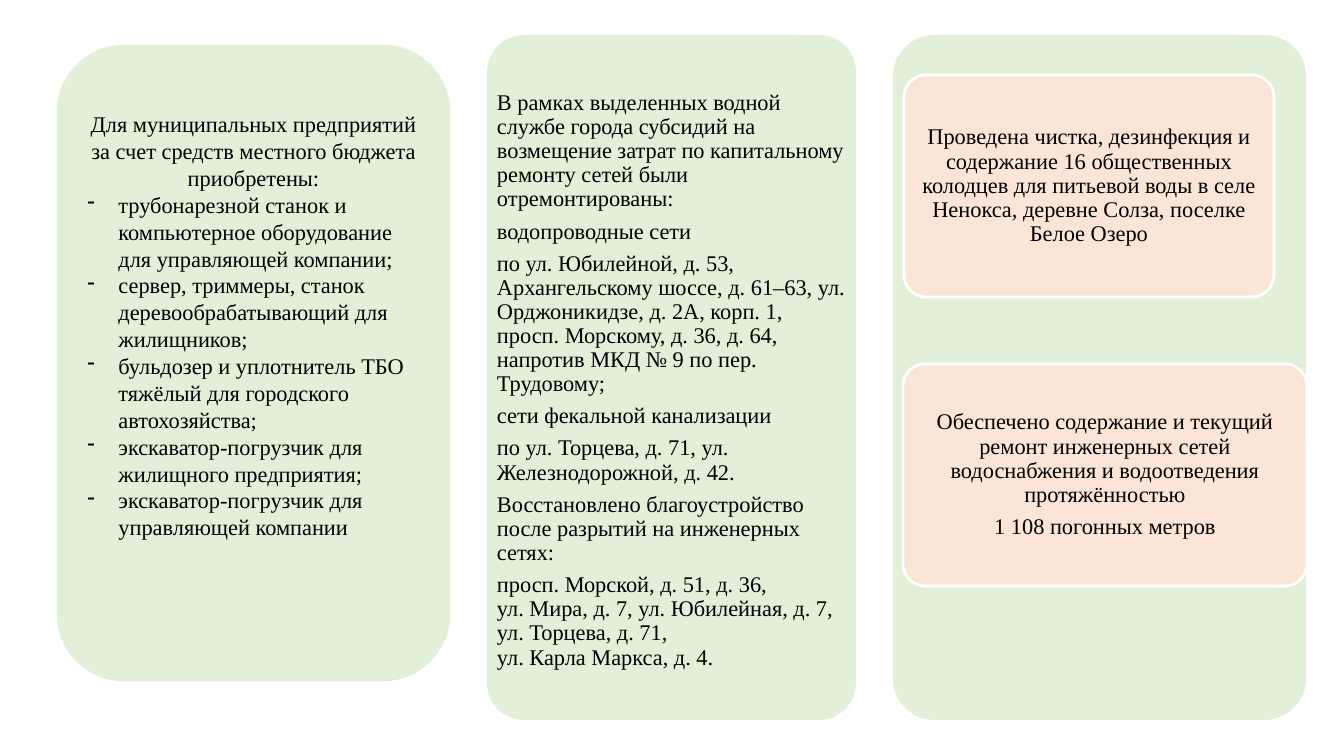
"""Builds a slide with three panels on municipal utilities work."""
from lxml.etree import SubElement
from pptx import Presentation
from pptx.dml.color import RGBColor
from pptx.enum.shapes import MSO_SHAPE
from pptx.enum.text import MSO_ANCHOR, PP_ALIGN
from pptx.oxml.ns import qn
from pptx.util import Emu, Pt

PURCHASES_TITLE = "Для муниципальных предприятий за счет средств местного бюджета приобретены:"
PURCHASES = [
    "трубонарезной станок и компьютерное оборудование для управляющей компании;",
    "сервер, триммеры, станок деревообрабатывающий для жилищников;",
    "бульдозер и уплотнитель ТБО тяжёлый для городского автохозяйства;",
    "экскаватор-погрузчик для жилищного предприятия;",
    "экскаватор-погрузчик для управляющей компании",
]
REPAIRS = [
    "В рамках выделенных водной службе города субсидий на возмещение затрат по "
    "капитальному ремонту сетей были отремонтированы:",
    "водопроводные сети",
    "по ул. Юбилейной, д. 53, Архангельскому шоссе, д. 61–63, ул. Орджоникидзе, д. 2А, "
    "корп. 1, просп. Морскому, д. 36, д. 64, напротив МКД № 9 по пер. Трудовому;",
    "сети фекальной канализации",
    "по ул. Торцева, д. 71, ул. Железнодорожной, д. 42.",
    "Восстановлено благоустройство после разрытий на инженерных сетях:",
    "просп. Морской, д. 51, д. 36,\nул. Мира, д. 7, ул. Юбилейная, д. 7, "
    "ул. Торцева, д. 71,\nул. Карла Маркса, д. 4.",
]
WELLS = [
    "Проведена чистка, дезинфекция и содержание 16 общественных колодцев для питьевой "
    "воды в селе Ненокса, деревне Солза, поселке Белое Озеро",
]
NETWORKS = [
    "Обеспечено содержание и текущий ремонт инженерных сетей водоснабжения и "
    "водоотведения протяжённостью",
    "1 108 погонных метров",
]
PURCHASES_BOX = (58, 46, 391, 634)
REPAIRS_BOX = (487, 35, 369, 685)
REPAIRS_TEXT_BOX = (487, 81, 369, 600)
SERVICES_BOX = (893, 35, 413, 685)
CARDS = [((904, 75, 370, 222), WELLS), ((903, 364, 404, 222), NETWORKS)]

GREEN = RGBColor(0xE2, 0xF0, 0xD9)
PEACH = RGBColor(0xFB, 0xE5, 0xD6)
WHITE = RGBColor(0xFF, 0xFF, 0xFF)
BLACK = RGBColor(0, 0, 0)
FONT = "Times New Roman"
PX = 914400 / 100.8
INDENT = 31


def px(length):
    return Emu(round(length * PX))


def add_panel(slide, box, fill, line=None, corner=0.1):
    panel = slide.shapes.add_shape(MSO_SHAPE.ROUNDED_RECTANGLE, *map(px, box))
    panel.adjustments[0] = corner
    panel.shadow.inherit = False
    panel.fill.solid()
    panel.fill.fore_color.rgb = fill
    if line is None:
        panel.line.fill.background()
    else:
        panel.line.color.rgb = line
        panel.line.width = Pt(2)
    return panel


def set_frame(frame, anchor, side, top):
    frame.word_wrap = True
    frame.vertical_anchor = anchor
    frame.margin_left = frame.margin_right = px(side)
    frame.margin_top = px(top)
    frame.margin_bottom = px(min(side, top))


def write(frame, texts, align, spacing=None, after=0, bullet=None):
    for text in texts:
        paragraph = frame.paragraphs[0]
        if paragraph.runs:
            paragraph = frame.add_paragraph()
        paragraph.alignment = align
        paragraph.line_spacing = spacing
        paragraph.space_after = Pt(after)
        if bullet:
            properties = paragraph._p.get_or_add_pPr()
            properties.set("marL", str(px(INDENT)))
            properties.set("indent", str(-px(INDENT)))
            SubElement(properties, qn("a:buFontTx"))
            SubElement(properties, qn("a:buChar")).set("char", bullet)
        for number, part in enumerate(text.split("\n")):
            if number:
                paragraph.add_line_break()
            run = paragraph.add_run()
            run.text = part
            run.font.name = FONT
            run.font.size = Pt(16)
            run.font.color.rgb = BLACK


def main():
    deck = Presentation()
    deck.slide_width, deck.slide_height = px(1344), px(756)
    slide = deck.slides.add_slide(deck.slide_layouts[6])

    add_panel(slide, REPAIRS_BOX, GREEN)
    repairs = slide.shapes.add_textbox(*map(px, REPAIRS_TEXT_BOX)).text_frame
    set_frame(repairs, MSO_ANCHOR.TOP, side=10, top=10)
    write(repairs, REPAIRS, PP_ALIGN.LEFT, spacing=0.9, after=5.6)

    add_panel(slide, SERVICES_BOX, GREEN)
    for box, texts in CARDS:
        card = add_panel(slide, box, PEACH, WHITE).text_frame
        set_frame(card, MSO_ANCHOR.MIDDLE, side=4, top=4)
        write(card, texts, PP_ALIGN.CENTER, spacing=0.9, after=5.6)

    purchases = add_panel(slide, PURCHASES_BOX, GREEN, GREEN, corner=0.17).text_frame
    set_frame(purchases, MSO_ANCHOR.TOP, side=10, top=45)
    write(purchases, [PURCHASES_TITLE], PP_ALIGN.CENTER)
    write(purchases, PURCHASES, PP_ALIGN.LEFT, bullet="-")

    deck.save("out.pptx")


if __name__ == "__main__":
    main()
